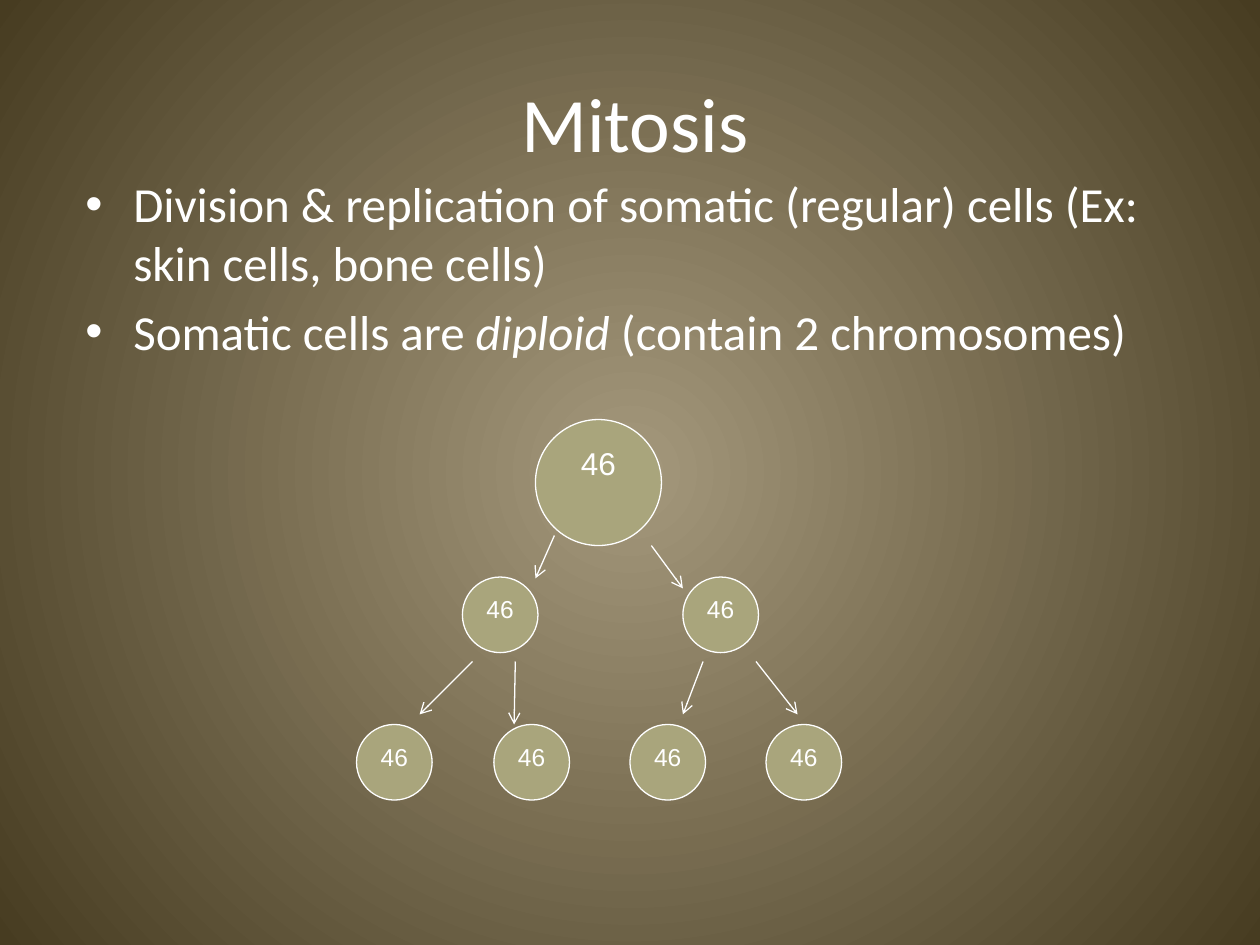
from lxml.etree import SubElement
from pptx import Presentation
from pptx.dml.color import RGBColor
from pptx.enum.shapes import MSO_CONNECTOR, MSO_SHAPE
from pptx.enum.text import MSO_ANCHOR, PP_ALIGN
from pptx.oxml.ns import qn
from pptx.util import Inches, Pt

WHITE, CELL = "FFFFFF", "A9A57C"
BACKGROUND = ["A4987C", "473C21"]
TITLE = "Mitosis"
BULLETS = [
    [("Division & replication of somatic (regular) cells (Ex: skin cells, bone cells)", False)],
    [("Somatic cells are ", False), ("diploid", True), (" (contain 2 chromosomes)", False)],
]
COUNT = "46"
GENERATIONS = [
    {"top": 3.33, "size": 1, "font": 18, "lefts": [4.25]},
    {"top": 4.58, "size": 0.6, "font": 14, "lefts": [3.67, 5.42]},
    {"top": 5.75, "size": 0.6, "font": 14, "lefts": [2.83, 3.92, 5, 6.08]},
]
ARROWS = [
    ((4.4, 4.25), (4.25, 4.59)),
    ((5.17, 4.33), (5.42, 4.67)),
    ((3.75, 5.25), (3.33, 5.67)),
    ((4.09, 5.25), (4.08, 5.75)),
    ((5.58, 5.25), (5.42, 5.67)),
    ((6, 5.25), (6.33, 5.67)),
]


def rgb(color):
    return RGBColor.from_string(color)


def add_text(p, text, size, font="Calibri", italic=False, align=None):
    r = p.add_run()
    r.text = text
    r.font.name, r.font.size, r.font.italic = font, Pt(size), italic
    r.font.color.rgb = rgb(WHITE)
    if align is not None:
        p.alignment = align


def add_box(s, top, height):
    tf = s.shapes.add_textbox(*map(Inches, (0.58, top, 8.92, height))).text_frame
    tf.word_wrap = True
    return tf


def set_bullet(p):
    p.space_before = Pt(5.6)
    pPr = p._p.get_or_add_pPr()
    pPr.set("marL", str(Inches(0.38)))
    pPr.set("indent", str(-Inches(0.38)))
    SubElement(pPr, qn("a:buFont"), typeface="Arial")
    SubElement(pPr, qn("a:buChar"), char="•")


def set_background(s):
    fill = s.background.fill
    fill.gradient()
    for stop, color in zip(fill.gradient_stops, BACKGROUND):
        stop.color.rgb = rgb(color)
    grad = s.element.find(".//" + qn("a:gradFill"))
    grad.remove(grad.find(qn("a:lin")))
    circle = SubElement(grad, qn("a:path"), path="circle")
    SubElement(circle, qn("a:fillToRect"), l="50000", t="50000", r="50000", b="50000")


def add_cell(s, left, top, size, font):
    sp = s.shapes.add_shape(MSO_SHAPE.FLOWCHART_CONNECTOR, *map(Inches, (left, top, size, size)))
    sp.shadow.inherit = False
    sp.fill.solid()
    sp.fill.fore_color.rgb = rgb(CELL)
    sp.line.color.rgb = rgb(WHITE)
    sp.line.width = Pt(0.75)
    tf = sp.text_frame
    tf.word_wrap = False
    tf.vertical_anchor = MSO_ANCHOR.TOP
    add_text(tf.paragraphs[0], COUNT, font, font="Arial", align=PP_ALIGN.CENTER)


def add_arrow(s, start, end):
    line = s.shapes.add_connector(MSO_CONNECTOR.STRAIGHT, *map(Inches, start + end))
    line.line.color.rgb = rgb(WHITE)
    line.line.width = Pt(0.75)
    SubElement(line.line._get_or_add_ln(), qn("a:tailEnd"), type="arrow")
    SubElement(line._element.spPr, qn("a:effectLst"))


def main():
    prs = Presentation()
    prs.slide_width, prs.slide_height = Inches(10), Inches(7.5)
    s = prs.slides.add_slide(prs.slide_layouts[6])
    set_background(s)

    tf = add_box(s, 0.52, 0.9)
    tf.vertical_anchor = MSO_ANCHOR.MIDDLE
    add_text(tf.paragraphs[0], TITLE, 44, align=PP_ALIGN.CENTER)

    tf = add_box(s, 1.33, 5.92)
    for i, runs in enumerate(BULLETS):
        p = tf.add_paragraph() if i else tf.paragraphs[0]
        set_bullet(p)
        for text, italic in runs:
            add_text(p, text, 28, italic=italic)

    for row in GENERATIONS:
        for left in row["lefts"]:
            add_cell(s, left, row["top"], row["size"], row["font"])
    for start, end in ARROWS:
        add_arrow(s, start, end)

    prs.save("out.pptx")


if __name__ == "__main__":
    main()
